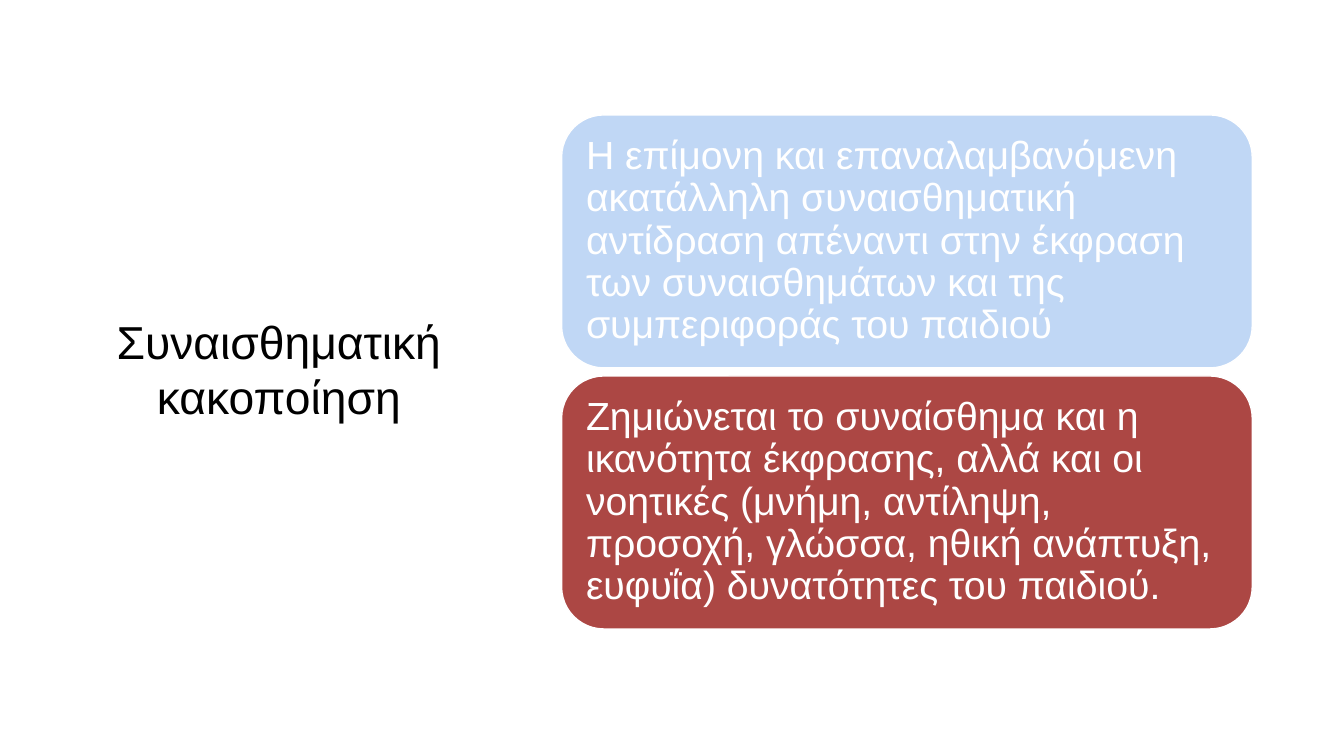
from dataclasses import dataclass

from pptx import Presentation
from pptx.dml.color import RGBColor
from pptx.enum.shapes import MSO_SHAPE
from pptx.enum.text import MSO_ANCHOR, PP_ALIGN
from pptx.util import Inches, Pt

ROUNDED = MSO_SHAPE.ROUNDED_RECTANGLE
MIDDLE = MSO_ANCHOR.MIDDLE
LEFT, CENTER = PP_ALIGN.LEFT, PP_ALIGN.CENTER


@dataclass(frozen=True)
class Theme:
    font: str = "Arial"
    title_size: int = 33
    card_size: int = 28
    black: str = "000000"
    white: str = "FFFFFF"
    blue: str = "C0D7F5"
    red: str = "AC4744"


THEME = Theme()

TITLE = "Συναισθηματική κακοποίηση"
CARDS = [
    ("Η επίμονη και επαναλαμβανόμενη ακατάλληλη συναισθηματική αντίδραση "
     "απέναντι στην έκφραση των συναισθημάτων και της συμπεριφοράς του παιδιού",
     THEME.blue),
    ("Ζημιώνεται το συναίσθημα και η ικανότητα έκφρασης, αλλά και οι νοητικές "
     "(μνήμη, αντίληψη, προσοχή, γλώσσα, ηθική ανάπτυξη, ευφυΐα) δυνατότητες "
     "του παιδιού.",
     THEME.red),
]

CARD_LEFT, CARD_TOP = 5.57, 1.14
CARD_WIDTH, CARD_HEIGHT = 6.85, 2.51
CARD_PITCH = 2.59
CARD_MARGIN = Inches(0.12)


def set_text(sp, text, size, color, align):
    tf = sp.text_frame
    tf.word_wrap = True
    tf.vertical_anchor = MIDDLE
    p = tf.paragraphs[0]
    p.text = text
    p.alignment = align
    font = p.runs[0].font
    font.name = THEME.font
    font.size = Pt(size)
    font.color.rgb = RGBColor.from_string(color)
    return tf


def add_title(slide, text):
    sp = slide.shapes.add_textbox(Inches(0.92), Inches(0.61), Inches(3.69), Inches(6.09))
    set_text(sp, text, THEME.title_size, THEME.black, CENTER)


def add_card(slide, top, text, fill):
    sp = slide.shapes.add_shape(ROUNDED, Inches(CARD_LEFT), Inches(top),
                                Inches(CARD_WIDTH), Inches(CARD_HEIGHT))
    sp.shadow.inherit = False
    sp.fill.solid()
    sp.fill.fore_color.rgb = RGBColor.from_string(fill)
    sp.line.color.rgb = RGBColor.from_string(THEME.white)
    sp.line.width = Pt(1)
    tf = set_text(sp, text, THEME.card_size, THEME.white, LEFT)
    tf.margin_left = tf.margin_right = CARD_MARGIN
    tf.margin_top = tf.margin_bottom = CARD_MARGIN
    tf.paragraphs[0].line_spacing = 0.9


def main():
    prs = Presentation()
    prs.slide_width, prs.slide_height = Inches(13.33), Inches(7.5)
    slide = prs.slides.add_slide(prs.slide_layouts[6])
    add_title(slide, TITLE)
    for i, (text, fill) in enumerate(CARDS):
        add_card(slide, CARD_TOP + i * CARD_PITCH, text, fill)
    prs.save("out.pptx")


if __name__ == "__main__":
    main()
